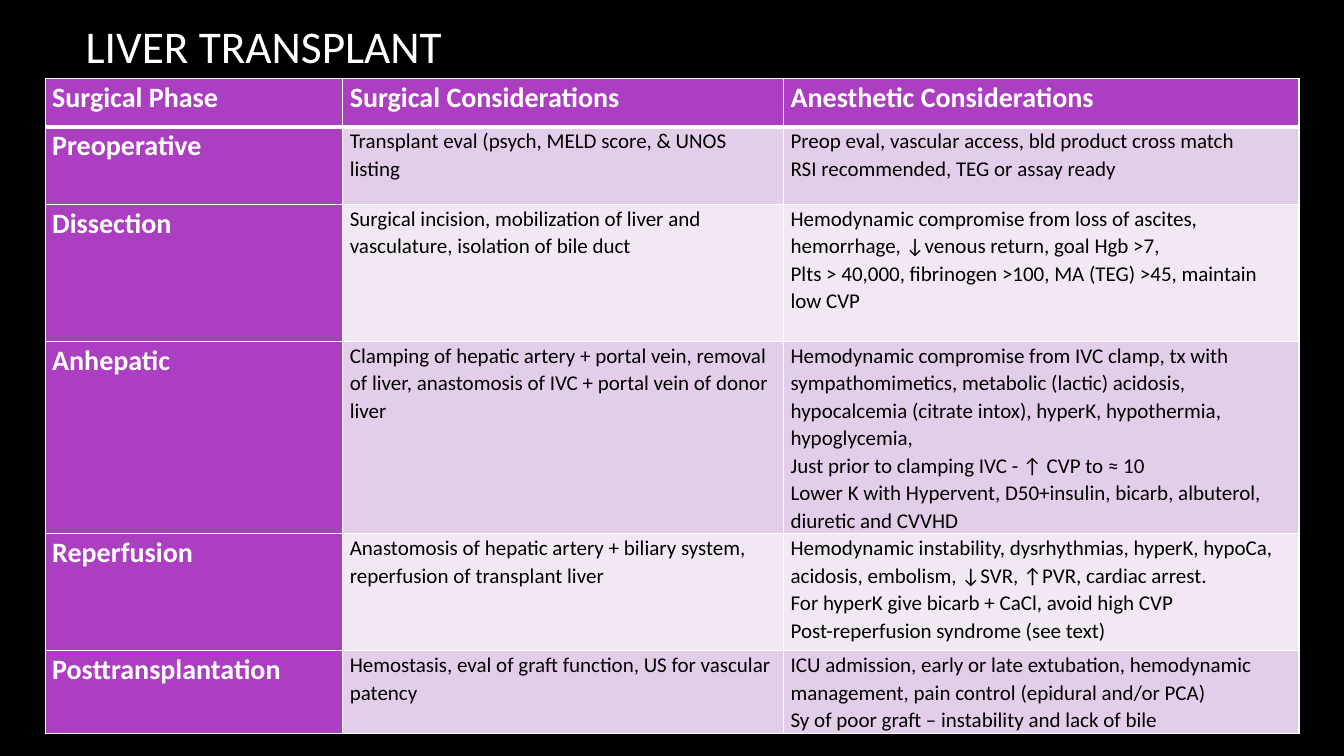
from lxml.etree import SubElement as Sub
from pptx import Presentation
from pptx.dml.color import RGBColor as RGB
from pptx.enum.text import MSO_ANCHOR as Anchor, MSO_AUTO_SIZE as Fit, PP_ALIGN as Align
from pptx.oxml.ns import qn
from pptx.util import Pt

BLACK = RGB(0x00, 0x00, 0x00)
WHITE = RGB(0xFF, 0xFF, 0xFF)
PURPLE = RGB(0xAC, 0x3E, 0xC1)
BANDS = [RGB(0xF1, 0xE8, 0xF4), RGB(0xE3, 0xCE, 0xE9)]

TITLE = {"name": "Calibri", "size": Pt(32.4), "bold": False}
HEAD = {"name": "Calibri", "size": Pt(20), "bold": True}
BODY = {"name": "Calibri", "size": Pt(15), "bold": False}
INSETS = {"margin_left": Pt(5), "margin_right": Pt(5),
          "margin_top": Pt(0), "margin_bottom": Pt(0)}

COLS = [212.6, 314.9, 368.1]
ROWS = [34.5, 55.4, 97.9, 127.4, 83.5, 55.4]
PHASES = [
    ("Surgical Phase", "Surgical Considerations", "Anesthetic Considerations"),
    ("Preoperative",
     "Transplant eval (psych, MELD score, & UNOS listing",
     "Preop eval, vascular access, bld product cross match\n"
     "RSI recommended, TEG or assay ready"),
    ("Dissection",
     "Surgical incision, mobilization of liver and vasculature, "
     "isolation of bile duct",
     "Hemodynamic compromise from loss of ascites, hemorrhage, "
     "↓venous return, goal Hgb >7,\n"
     "Plts > 40,000, fibrinogen >100, MA (TEG) >45, maintain low CVP"),
    ("Anhepatic",
     "Clamping of hepatic artery + portal vein, removal of liver, "
     "anastomosis of IVC + portal vein of donor liver",
     "Hemodynamic compromise from IVC clamp, tx with sympathomimetics, "
     "metabolic (lactic) acidosis, hypocalcemia (citrate intox), hyperK, "
     "hypothermia, hypoglycemia,\n"
     "Just prior to clamping IVC - ↑ CVP to ≈ 10\n"
     "Lower K with Hypervent, D50+insulin, bicarb, albuterol, "
     "diuretic and CVVHD"),
    ("Reperfusion",
     "Anastomosis of hepatic artery + biliary system, "
     "reperfusion of transplant liver",
     "Hemodynamic instability, dysrhythmias, hyperK, hypoCa, acidosis, "
     "embolism, ↓SVR, ↑PVR, cardiac arrest.\n"
     "For hyperK give bicarb + CaCl, avoid high CVP\n"
     "Post-reperfusion syndrome (see text)"),
    ("Posttransplantation",
     "Hemostasis, eval of graft function, US for vascular patency",
     "ICU admission, early or late extubation, hemodynamic management, "
     "pain control (epidural and/or PCA)\n"
     "Sy of poor graft – instability and lack of bile"),
]


def style(item, values):
    for key, value in values.items():
        setattr(item, key, value)


def add_title(slide, text, left, top, width, height):
    title = slide.shapes.title
    style(title, {"left": Pt(left), "top": Pt(top),
                  "width": Pt(width), "height": Pt(height)})
    frame = title.text_frame
    frame.text = text
    style(frame, {"vertical_anchor": Anchor.BOTTOM, "auto_size": Fit.NONE,
                  "word_wrap": True})
    para = frame.paragraphs[0]
    style(para, {"alignment": Align.LEFT, "line_spacing": 0.9})
    style(para.font, TITLE)
    para.font.color.rgb = WHITE


def set_edges(cell, widths):
    """Draw white cell borders; widths maps L, R, T and B to points."""
    props = cell._tc.get_or_add_tcPr()
    for side, width in widths.items():
        line = Sub(props, qn(f"a:ln{side}"), w=str(Pt(width)))
        fill = Sub(line, qn("a:solidFill"))
        Sub(fill, qn("a:srgbClr"), val=str(WHITE))


def fill_cell(cell, text, row, col):
    head = row == 0 or col == 0
    set_edges(cell, {"L": 1, "R": 1, "T": 3 if row == 1 else 1,
                     "B": 3 if row == 0 else 1})
    cell.fill.solid()
    cell.fill.fore_color.rgb = PURPLE if head else BANDS[row % 2]
    style(cell, INSETS)
    cell.text = text
    for para in cell.text_frame.paragraphs:
        para.line_spacing = 1.07
        for run in para.runs:
            style(run.font, HEAD if head else BODY)
            run.font.color.rgb = WHITE if head else BLACK


def add_phases(slide, left, top):
    table = slide.shapes.add_table(
        len(ROWS), len(COLS), Pt(left), Pt(top),
        Pt(sum(COLS)), Pt(sum(ROWS))).table
    table.first_col = True
    for column, width in zip(table.columns, COLS):
        column.width = Pt(width)
    for row, height in enumerate(ROWS):
        table.rows[row].height = Pt(height)
        for col, text in enumerate(PHASES[row]):
            fill_cell(table.cell(row, col), text, row, col)


def main():
    deck = Presentation()
    style(deck, {"slide_width": Pt(960), "slide_height": Pt(540)})
    slide = deck.slides.add_slide(deck.slide_layouts[5])
    back = slide.background.fill
    back.solid()
    back.fore_color.rgb = BLACK
    add_title(slide, "LIVER TRANSPLANT", 54, 23, 798, 33)
    add_phases(slide, 32.3, 56)
    deck.save("out.pptx")


if __name__ == "__main__":
    main()
